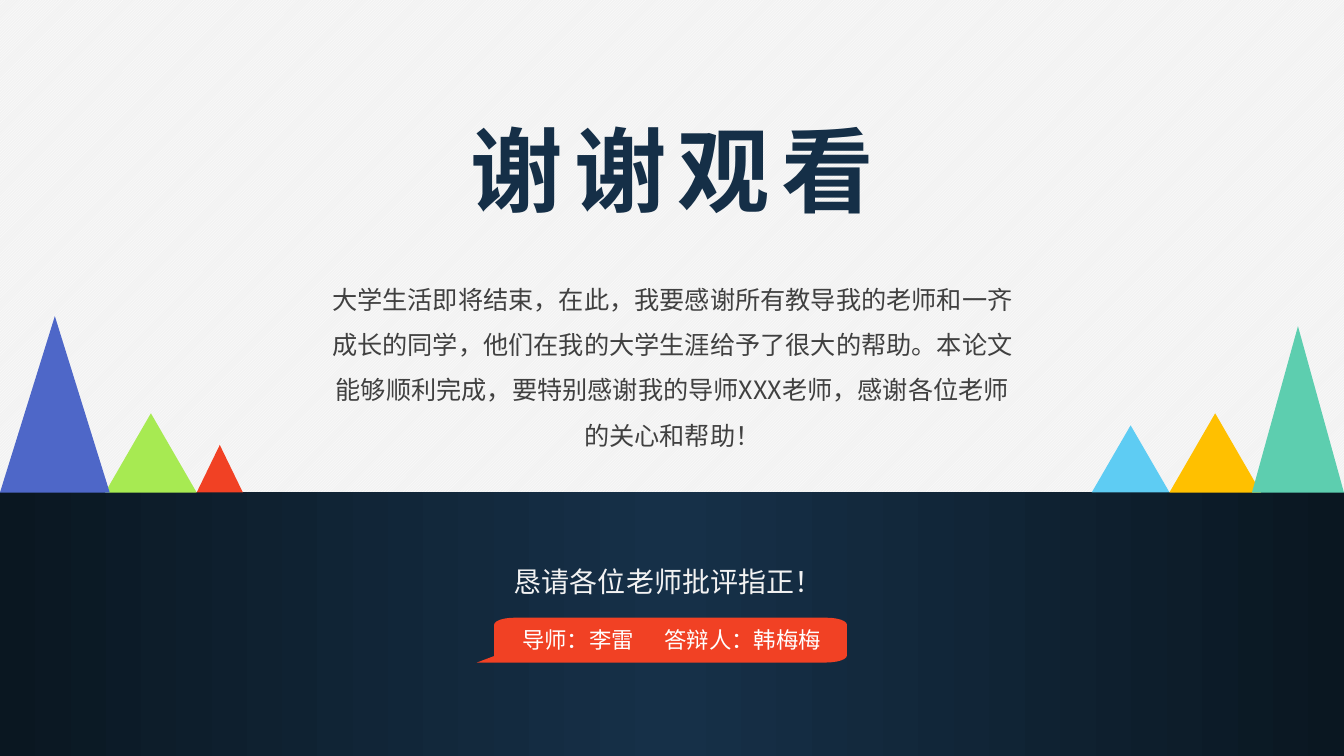
import math
from lxml import etree
from pptx import Presentation
from pptx.dml.color import RGBColor
from pptx.enum.dml import MSO_PATTERN
from pptx.enum.shapes import MSO_SHAPE
from pptx.enum.text import MSO_AUTO_SIZE, PP_ALIGN
from pptx.oxml.ns import qn
from pptx.util import Pt

LEFT, CENTER = PP_ALIGN.LEFT, PP_ALIGN.CENTER
RECTANGLE, TRIANGLE = MSO_SHAPE.RECTANGLE, MSO_SHAPE.ISOSCELES_TRIANGLE
GROW = MSO_AUTO_SIZE.SHAPE_TO_FIT_TEXT
DIAGONAL = MSO_PATTERN.LIGHT_UPWARD_DIAGONAL

FONT = "Noto Sans CJK SC"
WIDTH, HEIGHT = 960, 540
BAND_TOP, BAND_MIDDLE = 351.2, 478.6
BAND_COLORS = ("163048", "0A1721")
RED = "F14124"

THANKS = "谢谢观看"
MESSAGE = ("大学生活即将结束，在此，我要感谢所有教导我的老师和一齐成长的同学，"
           "他们在我的大学生涯给予了很大的帮助。本论文能够顺利完成，"
           "要特别感谢我的导师XXX老师，感谢各位老师的关心和帮助！")
REQUEST = "恳请各位老师批评指正！"
NAMES = ("导师：李雷", "答辩人：韩梅梅")
NAMES_INDENT, NAMES_TAB = 36, 101.6

TRIANGLES = [
    (75.1, 65.4, 56.6, "A7EA52"),
    (779.8, 55.6, 48, "5ECCF3"),
    (0, 78.4, 126, "4E67C8"),
    (140.5, 33, 34, RED),
    (835.3, 65.4, 56.6, "FFC000"),
    (894.3, 65.7, 118.8, "5DCEAF"),
]
TRIANGLE_BASE = 351.8

BUBBLE = (353, 441.2, 605, 473.2)
CORNER = (14.6, 5)
TAIL = [(340.7, 473.2), (353, 468.6)]


def color(value):
    return RGBColor.from_string(value)


def finish(shape, fill):
    shape.shadow.inherit = False
    shape.line.fill.background()
    shape.fill.solid()
    shape.fill.fore_color.rgb = color(fill)


def add_shape(slide, kind, box, fill):
    shape = slide.shapes.add_shape(kind, *map(Pt, box))
    finish(shape, fill)
    return shape


def add_text(slide, text, box, size, fill, align=CENTER, bold=False,
             line_spacing=None, spacing=0, indent=7.2, tab=None):
    frame = slide.shapes.add_textbox(*map(Pt, box)).text_frame
    frame.word_wrap = True
    frame.auto_size = GROW
    frame.margin_left = Pt(indent)
    paragraph = frame.paragraphs[0]
    paragraph.text = text
    paragraph.alignment = align
    if line_spacing:
        paragraph.line_spacing = line_spacing
    properties = paragraph._p.get_or_add_pPr()
    if tab:
        tabs = etree.SubElement(properties, qn("a:tabLst"))
        etree.SubElement(tabs, qn("a:tab"), pos=str(Pt(tab)), algn="l")
    font = paragraph.font
    font.size = Pt(size)
    font.bold = bold
    font.color.rgb = color(fill)
    font.name = FONT
    defaults = properties.find(qn("a:defRPr"))
    if spacing:
        defaults.set("spc", str(spacing * 100))
    etree.SubElement(defaults, qn("a:ea"), typeface=FONT)


def corner(x, y, start):
    angles = [math.radians(start + step * 15) for step in range(7)]
    return [(x + CORNER[0] * math.cos(angle), y + CORNER[1] * math.sin(angle))
            for angle in angles]


def add_bubble(slide):
    left, top, right, bottom = BUBBLE
    inner_left, inner_right = left + CORNER[0], right - CORNER[0]
    upper, lower = top + CORNER[1], bottom - CORNER[1]
    points = (corner(inner_left, upper, 180) + corner(inner_right, upper, 270)
              + corner(inner_right, lower, 0) + TAIL)
    points = [(Pt(x), Pt(y)) for x, y in points]
    builder = slide.shapes.build_freeform(*points[0])
    builder.add_line_segments(points[1:])
    finish(builder.convert_to_shape(), RED)


def add_band(slide, left, width, rotation):
    box = (left, BAND_TOP, width, HEIGHT - BAND_TOP)
    band = add_shape(slide, RECTANGLE, box, BAND_COLORS[0])
    band.rotation = rotation
    band.fill.gradient()
    band.fill.gradient_angle = 0
    for stop, position, value in zip(band.fill.gradient_stops, (0, 1), BAND_COLORS):
        stop.position = position
        stop.color.rgb = color(value)


def main():
    presentation = Presentation()
    presentation.slide_width, presentation.slide_height = Pt(WIDTH), Pt(HEIGHT)
    slide = presentation.slides.add_slide(presentation.slide_layouts[6])
    background = slide.background.fill
    background.patterned()
    background.pattern = DIAGONAL
    background.fore_color.rgb = color("FFFFFF")
    background.back_color.rgb = color("F2F2F2")

    add_band(slide, 0, BAND_MIDDLE, 180)
    add_band(slide, BAND_MIDDLE, WIDTH - BAND_MIDDLE, 0)
    add_text(slide, THANKS, (305.3, 77, 349.9, 87.1), 66, "152F47",
             bold=True, spacing=8)
    add_text(slide, MESSAGE, (226.8, 188.6, 506.9, 139.7), 18, "404040",
             line_spacing=1.5)
    add_text(slide, REQUEST, (360, 387.4, 239.8, 39.6), 20, "F2F2F2",
             align=LEFT, line_spacing=1.5)
    for left, width, height, fill in TRIANGLES:
        add_shape(slide, TRIANGLE, (left, TRIANGLE_BASE - height, width, height), fill)
    add_bubble(slide)
    add_text(slide, "\t".join(NAMES), (337, 443.5, 286.6, 26.6), 16, "FFFFFF",
             align=LEFT, indent=NAMES_INDENT, tab=NAMES_TAB)
    presentation.save("out.pptx")


if __name__ == "__main__":
    main()
